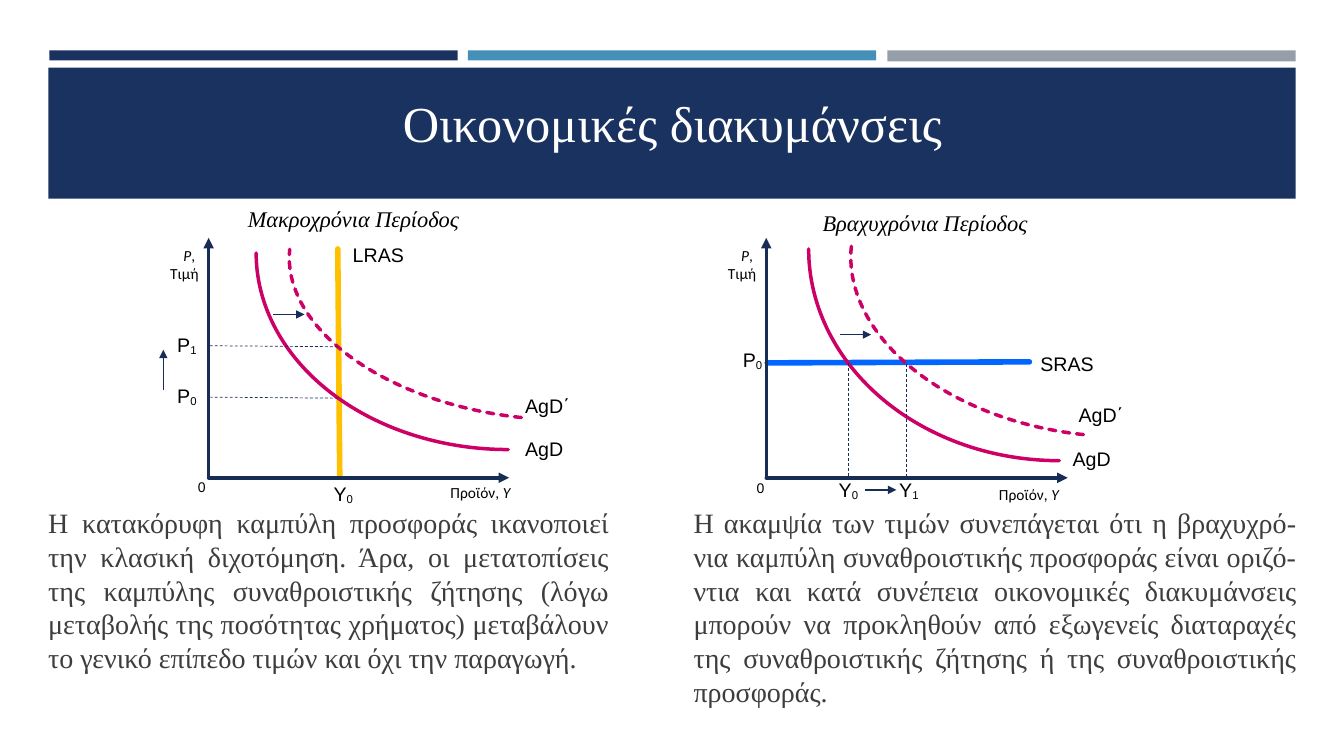
"""Build the slide on economic fluctuations with its two supply and demand diagrams."""
from lxml import etree
from pptx import Presentation
from pptx.dml.color import RGBColor
from pptx.enum import dml, shapes, text
from pptx.oxml.ns import qn
from pptx.util import Inches, Pt

NAVY = RGBColor(0x1A, 0x32, 0x60)
INK = RGBColor(0x17, 0x2D, 0x56)
BLUE = RGBColor(0x45, 0x90, 0xB8)
GRAY = RGBColor(0x96, 0x9F, 0xA7)
MAGENTA = RGBColor(0xCC, 0x00, 0x66)
GOLD = RGBColor(0xFF, 0xC0, 0x00)
SUPPLY_BLUE = RGBColor(0x00, 0x66, 0xFF)
BODY = RGBColor(0x3D, 0x3D, 0x3D)
BLACK = RGBColor(0, 0, 0)
WHITE = RGBColor(0xFF, 0xFF, 0xFF)
SERIF = "Times New Roman"
LEFT, CENTER, RIGHT, JUSTIFY = (
    text.PP_ALIGN.LEFT, text.PP_ALIGN.CENTER, text.PP_ALIGN.RIGHT, text.PP_ALIGN.JUSTIFY)
DASH, SHORT_DASH = dml.MSO_LINE.DASH, dml.MSO_LINE.SQUARE_DOT

TITLE = "Οικονομικές διακυμάνσεις"
BARS = [
    (0.49, 0.5, 4.05, 0.1, NAVY),
    (4.64, 0.5, 4.05, 0.1, BLUE),
    (8.8, 0.5, 4.05, 0.11, GRAY),
    (0.48, 0.67, 12.37, 1.3, NAVY),
]
DIAGRAMS = [
    {
        "caption": ("Μακροχρόνια Περίοδος", 2.36, 1.99),
        "body": ("Η κατακόρυφη καμπύλη προσφοράς ικανοποιεί την κλασική διχοτόμηση. "
                 "Άρα, οι μετατοπίσεις της καμπύλης συναθροιστικής ζήτησης (λόγω "
                 "μεταβολής της ποσότητας χρήματος) μεταβάλουν το γενικό επίπεδο τιμών "
                 "και όχι την παραγωγή.", 0.38, 5.76, 1.91),
        "axis_x": 2.07, "axis_length": 2.98,
        "output_label": (4.16, 4.74), "zero": (1.88, 4.7),
        "supply": (3.37, 4.72, 3.35, 2.47, GOLD),
        "demand": (2.54, 0.56, 5, 3.9),
        "shifted_demand": (2.86, 1.31, 4.92, 2.84),
        "guides": [(3.35, 3.95, 2.08, 3.94), (3.35, 3.44, 2.08, 3.43)],
        "arrows": [(2.71, 3.12, 3.02, 3.12), (1.62, 3.87, 1.62, 3.47)],
        "labels": [("LRAS", "", 3.4, 2.36), ("AgD", "", 5.11, 4.29),
                   ("AgD΄", "", 5.11, 3.86), ("Υ", "0", 3.21, 4.73),
                   ("P", "0", 1.66, 3.76), ("P", "1", 1.66, 3.25)],
    },
    {
        "caption": ("Βραχυχρόνια Περίοδος", 8.06, 2.03),
        "body": ("Η ακαμψία των τιμών συνεπάγεται ότι η βραχυχρό-νια καμπύλη "
                 "συναθροιστικής προσφοράς είναι οριζό-ντια και κατά συνέπεια "
                 "οικονομικές διακυμάνσεις μπορούν να προκληθούν από εξωγενείς "
                 "διαταραχές της συναθροιστικής ζήτησης ή της συναθροιστικής "
                 "προσφοράς.", 6.78, 6.18, 2.19),
        "axis_x": 7.6, "axis_length": 2.99,
        "output_label": (9.6, 4.76), "zero": (7.42, 4.71),
        "supply": (7.61, 3.6, 10.21, 3.59, SUPPLY_BLUE),
        "demand": (8.02, 0.37, 4.97, 4.2),
        "shifted_demand": (8.43, 1.08, 4.97, 3.24),
        "guides": [(8.41, 3.6, 8.41, 4.74), (8.99, 3.61, 8.99, 4.74)],
        "arrows": [(8.58, 4.86, 8.89, 4.86), (8.33, 3.32, 8.64, 3.32)],
        "labels": [("SRAS", "", 10.22, 3.44), ("AgD", "", 10.54, 4.38),
                   ("AgD΄", "", 10.6, 3.95), ("Υ", "0", 8.22, 4.69),
                   ("Υ", "1", 8.82, 4.69), ("P", "0", 7.27, 3.4)],
    },
]
AXIS_TOP, AXIS_BOTTOM = 2.36, 4.74


def add_run(paragraph, words, size, font, color=BLACK, italic=False, subscript=False):
    run = paragraph.add_run()
    run.text = words
    run.font.size, run.font.name = Pt(size), font
    run.font.color.rgb, run.font.italic = color, italic
    if subscript:
        run.font._element.set("baseline", "-10000")


def add_box(slide, x, y, width, height, align=LEFT, side_inset=0.1):
    box = slide.shapes.add_textbox(Inches(x), Inches(y), Inches(width), Inches(height))
    frame = box.text_frame
    frame.word_wrap = True
    frame.margin_left = frame.margin_right = Inches(side_inset)
    frame.paragraphs[0].alignment = align
    return frame


def style_line(shape, color, width, dash=None, arrow=False):
    shape.line.color.rgb, shape.line.width = color, Pt(width)
    if dash is not None:
        shape.line.dash_style = dash
    properties = shape._element.spPr
    outline = properties.find(qn("a:ln"))
    if width > 2:
        outline.set("cap", "rnd")
    if arrow:
        etree.SubElement(outline, qn("a:tailEnd")).set("type", "triangle")
    if properties.find(qn("a:effectLst")) is None:
        etree.SubElement(properties, qn("a:effectLst"))


def add_line(slide, x1, y1, x2, y2, color, width, dash=None, arrow=False):
    line = slide.shapes.add_connector(
        shapes.MSO_CONNECTOR.STRAIGHT, Inches(x1), Inches(y1), Inches(x2), Inches(y2))
    style_line(line, color, width, dash, arrow)


def add_shape(slide, kind, x, y, width, height):
    shape = slide.shapes.add_shape(kind, Inches(x), Inches(y), Inches(width), Inches(height))
    shape.shadow.inherit = False
    return shape


def add_curve(slide, place, rotation, dash=None):
    curve = add_shape(slide, shapes.MSO_SHAPE.ARC, *place)
    curve.rotation = rotation
    curve.fill.background()
    style_line(curve, MAGENTA, 2.5, dash)


def add_header(slide):
    for x, y, width, height, color in BARS:
        bar = add_shape(slide, shapes.MSO_SHAPE.RECTANGLE, x, y, width, height)
        bar.fill.solid()
        bar.fill.fore_color.rgb = color
        bar.line.fill.background()
    title = slide.shapes.title
    title.left, title.top = Inches(0.64), Inches(0.69)
    title.width, title.height = Inches(12.06), Inches(0.87)
    title.text_frame.vertical_anchor = text.MSO_ANCHOR.BOTTOM
    paragraph = title.text_frame.paragraphs[0]
    paragraph.alignment = CENTER
    add_run(paragraph, TITLE, 36, SERIF, WHITE)
    slide.shapes._spTree.append(title._element)


def add_axes(slide, diagram):
    x = diagram["axis_x"]
    add_line(slide, x, AXIS_BOTTOM, x, AXIS_TOP, INK, 2.5, arrow=True)
    add_line(slide, x, AXIS_BOTTOM, x + diagram["axis_length"], AXIS_BOTTOM, INK, 2.5, arrow=True)
    price = add_box(slide, x - 1.26, 2.39, 1.26, 0.34, RIGHT)
    add_run(price.paragraphs[0], "P", 11, "Calibri", italic=True)
    add_run(price.paragraphs[0], ", ", 11, "Calibri")
    second = price.add_paragraph()
    second.alignment = RIGHT
    add_run(second, "Τιμή", 11, "Calibri")
    output = add_box(slide, *diagram["output_label"], 1, 0.29, RIGHT).paragraphs[0]
    add_run(output, "Προϊόν, ", 11, "Calibri")
    add_run(output, "Y", 11, "Calibri", italic=True)
    zero = add_box(slide, *diagram["zero"], 0.16, 0.27, RIGHT, side_inset=0)
    add_run(zero.paragraphs[0], "0", 10, "Arial")


def add_diagram(slide, diagram):
    words, x, y = diagram["caption"]
    add_run(add_box(slide, x, y, 2.37, 0.37).paragraphs[0], words, 16, SERIF, italic=True)
    *ends, color = diagram["supply"]
    add_line(slide, *ends, color, 4)
    add_axes(slide, diagram)
    add_curve(slide, diagram["demand"], 180)
    add_curve(slide, diagram["shifted_demand"], 186, SHORT_DASH)
    for guide in diagram["guides"]:
        add_line(slide, *guide, INK, 0.5, DASH)
    for arrow in diagram["arrows"]:
        add_line(slide, *arrow, INK, 1, arrow=True)
    for name, index, x, y in diagram["labels"]:
        paragraph = add_box(slide, x, y, 0.43 if index else 0.96, 0.34).paragraphs[0]
        add_run(paragraph, name, 14, "Arial")
        if index:
            add_run(paragraph, index, 14, "Arial", subscript=True)
    words, x, width, height = diagram["body"]
    paragraph = add_box(slide, x, 4.97, width, height, JUSTIFY).paragraphs[0]
    paragraph.space_before, paragraph.space_after = Pt(4), Pt(6)
    add_run(paragraph, words, 20, SERIF, BODY)


def main():
    presentation = Presentation()
    presentation.slide_width, presentation.slide_height = Inches(13.33), Inches(7.5)
    slide = presentation.slides.add_slide(presentation.slide_layouts[5])
    add_header(slide)
    for diagram in DIAGRAMS:
        add_diagram(slide, diagram)
    presentation.save("out.pptx")


if __name__ == "__main__":
    main()
